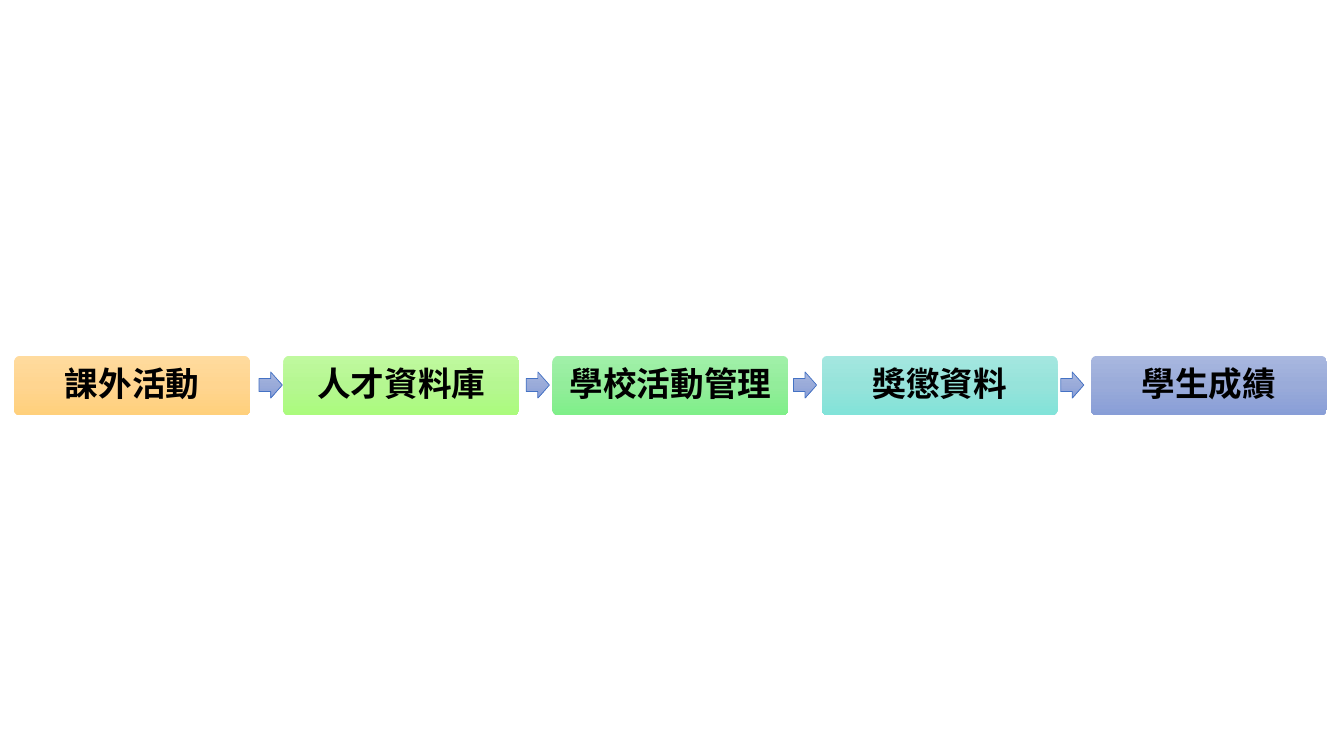
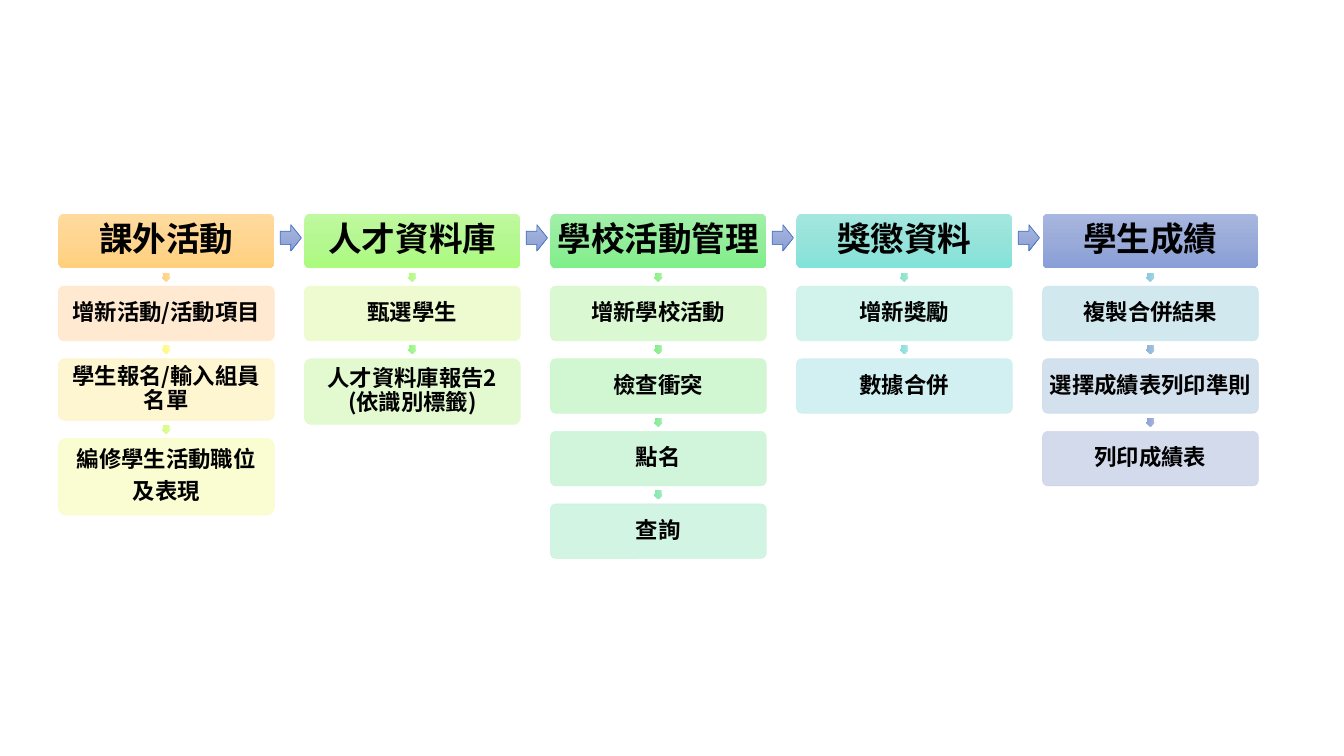
from copy import deepcopy

from lxml import etree
from pptx import Presentation
from pptx.dml.color import RGBColor
from pptx.enum.shapes import MSO_SHAPE
from pptx.enum.text import MSO_ANCHOR, PP_ALIGN
from pptx.oxml.ns import qn
from pptx.util import Inches, Pt

ROUND = MSO_SHAPE.ROUNDED_RECTANGLE
ARROW = MSO_SHAPE.RIGHT_ARROW
MIDDLE = MSO_ANCHOR.MIDDLE
CENTER = PP_ALIGN.CENTER

FONT = "Noto Sans CJK SC"
INK = "000000"
EDGE = "4472C4"
BLUE = ("A8B7DF", "9AABD9", "889ED7")
HEADS = [
    ("課外活動", ("FFDB9E", "FFD590", "FFD07C")),
    ("人才資料庫", ("C0F99F", "B5F791", "ABFB7D")),
    ("學校活動管理", ("A1F0A9", "93ED9B", "7FEF89")),
    ("獎懲資料", ("A4E7E0", "96E3DA", "82E3D9")),
    ("學生成績", BLUE),
]

ROW = 0.54
GAP = 0.18
TIP = 0.09
STEPS = [
    [
        (["增新活動/活動項目"], ROW, "FFE8CC", HEADS[0][1]),
        (["學生報名/輸入組員名單"], 0.61, "FEF4CC", ("FFFB9E", "FEFA91", "FFFA7C")),
        (["編修學生活動職位", "及表現"], 0.76, "FAFCCC", ("E1FD9E", "DBFB91", "DAFF7C")),
    ],
    [
        (["甄選學生"], ROW, "EDFBCC", ("C5FA9F", "BCF891", "B3FC7C")),
        (["人才資料庫報告2\n(依識別標籤)"], 0.65, "E1FACC", ("B1F79F", "A5F492", "95F87D")),
    ],
    [
        (["增新學校活動"], ROW, "D6F8CC", ("A5F4A0", "97F192", "83F47D")),
        (["檢查衝突"], ROW, "CCF7CE", ("A1F2A4", "93EE96", "7EF182")),
        (["點名"], ROW, "CDF5D8", ("A2EFB0", "94EBA3", "7FED93")),
        (["查詢"], ROW, "CDF3E1", ("A2ECC0", "94E8B6", "80E9AB")),
    ],
    [
        (["增新獎勵"], ROW, "CDF2E9", ("A3E9D2", "95E5CB", "81E5C5")),
        (["數據合併"], ROW, "CEEFF0", ("A5E7E4", "96E2DF", "83E2DF")),
    ],
    [
        (["複製合併結果"], ROW, "CEE6EE", ("A6D4E4", "98CDDF", "84C8DE")),
        (["選擇成績表列印準則"], ROW, "CFDDEC", ("A7C4E2", "99BADC", "86B0DB")),
        (["列印成績表"], ROW, "CFD6EA", BLUE),
    ],
]


def color(code):
    return RGBColor.from_string(code)


def add_form(slide, kind, left, top, width, height):
    form = slide.shapes.add_shape(kind, *map(Inches, (left, top, width, height)))
    form.shadow.inherit = False
    form.line.fill.background()
    return form


def blend(form, codes):
    form.fill.gradient()
    form.fill.gradient_angle = 270
    stops = form._element.spPr.find(".//" + qn("a:gsLst"))
    stops.insert(1, deepcopy(stops[0]))
    for stop, code, place in zip(form.fill.gradient_stops, codes, (0, 0.5, 1)):
        stop.color.rgb = color(code)
        stop.position = place


def outline(form, code):
    form.line.color.rgb = color(code)
    form.line.width = Pt(0.5)


def tint(form, code):
    form.fill.solid()
    form.fill.fore_color.rgb = color(code)
    outline(form, code)
    for node in form._element.spPr.iter(qn("a:srgbClr")):
        etree.SubElement(node, qn("a:alpha"), val="90000")


def add_run(para, text, size):
    run = para.add_run()
    run.text = text
    font = run.font
    font.name = FONT
    font.size = Pt(size)
    font.bold = True
    font.color.rgb = color(INK)
    etree.SubElement(run._r.get_or_add_rPr(), qn("a:ea"), typeface=FONT)


def write(form, paras, size):
    frame = form.text_frame
    frame.word_wrap = True
    frame.vertical_anchor = MIDDLE
    frame.margin_left = frame.margin_right = Inches(0.04)
    frame.margin_top = frame.margin_bottom = Inches(0.04)
    for i, text in enumerate(paras):
        para = frame.add_paragraph() if i else frame.paragraphs[0]
        para.alignment = CENTER
        para.line_spacing = 0.9
        para.space_after = Pt(0.35 * size)
        for j, part in enumerate(text.split("\n")):
            if j:
                para.add_line_break()
            add_run(para, part, size)


def add_card(slide, left, top, width, height, paras, size):
    card = add_form(slide, ROUND, left, top, width, height)
    card.adjustments[0] = 0.1
    write(card, paras, size)
    return card


def add_heads(slide, left, top, pitch, width, height):
    for col, (text, codes) in enumerate(HEADS):
        card = add_card(slide, left + col * pitch, top, width, height, [text], 24)
        blend(card, codes)


def add_links(slide, left, top, pitch, width):
    for col in range(len(HEADS) - 1):
        link = add_form(slide, ARROW, left + col * pitch, top, width, 0.26)
        blend(link, BLUE)
        outline(link, EDGE)


def add_tip(slide, mid, top, codes):
    tip = add_form(slide, ARROW, mid - TIP / 2, top, TIP, TIP)
    tip.rotation = 90
    tip.adjustments[0] = 0.67
    tip.adjustments[1] = 0.5
    blend(tip, codes)


def add_steps(slide, left, top, width, steps):
    for paras, height, fill, codes in steps:
        add_tip(slide, left + width / 2, top + (GAP - TIP) / 2, codes)
        top += GAP
        tint(add_card(slide, left, top, width, height, paras, 16), fill)
        top += height


def main():
    deck = Presentation()
    deck.slide_width = Inches(13.33)
    deck.slide_height = Inches(7.5)
    blank = deck.slide_layouts[6]

    brief = deck.slides.add_slide(blank)
    add_heads(brief, 0.14, 3.53, 2.67, 2.34, 0.59)
    add_links(brief, 2.57, 3.69, 2.65, 0.23)

    full = deck.slides.add_slide(blank)
    left, top, pitch, width = 0.58, 2.12, 2.44, 2.14
    add_heads(full, left, top, pitch, width, ROW)
    for col, steps in enumerate(STEPS):
        add_steps(full, left + col * pitch, top + ROW, width, steps)
    add_links(full, 2.78, 2.23, pitch, 0.21)

    deck.save("out.pptx")


if __name__ == "__main__":
    main()
